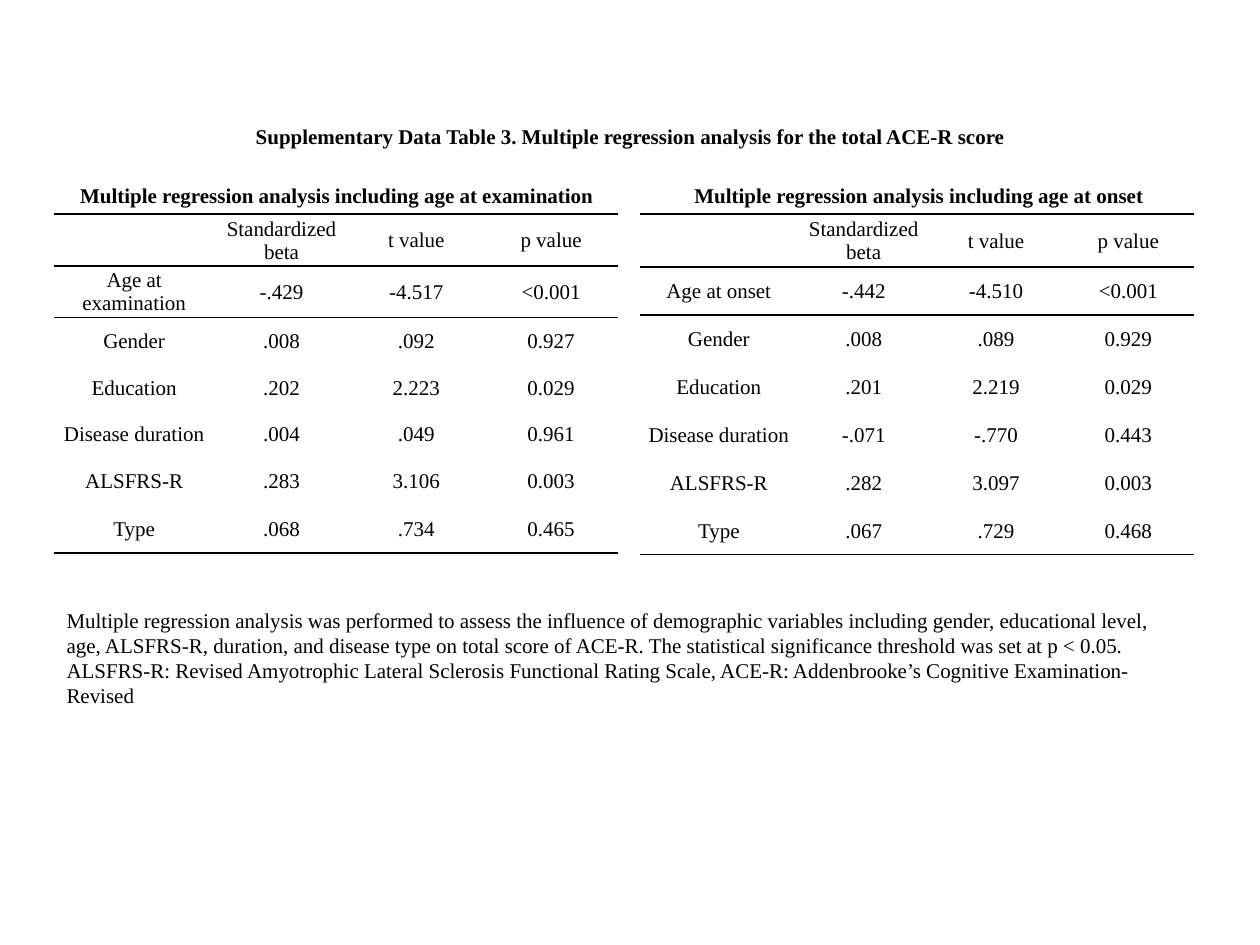
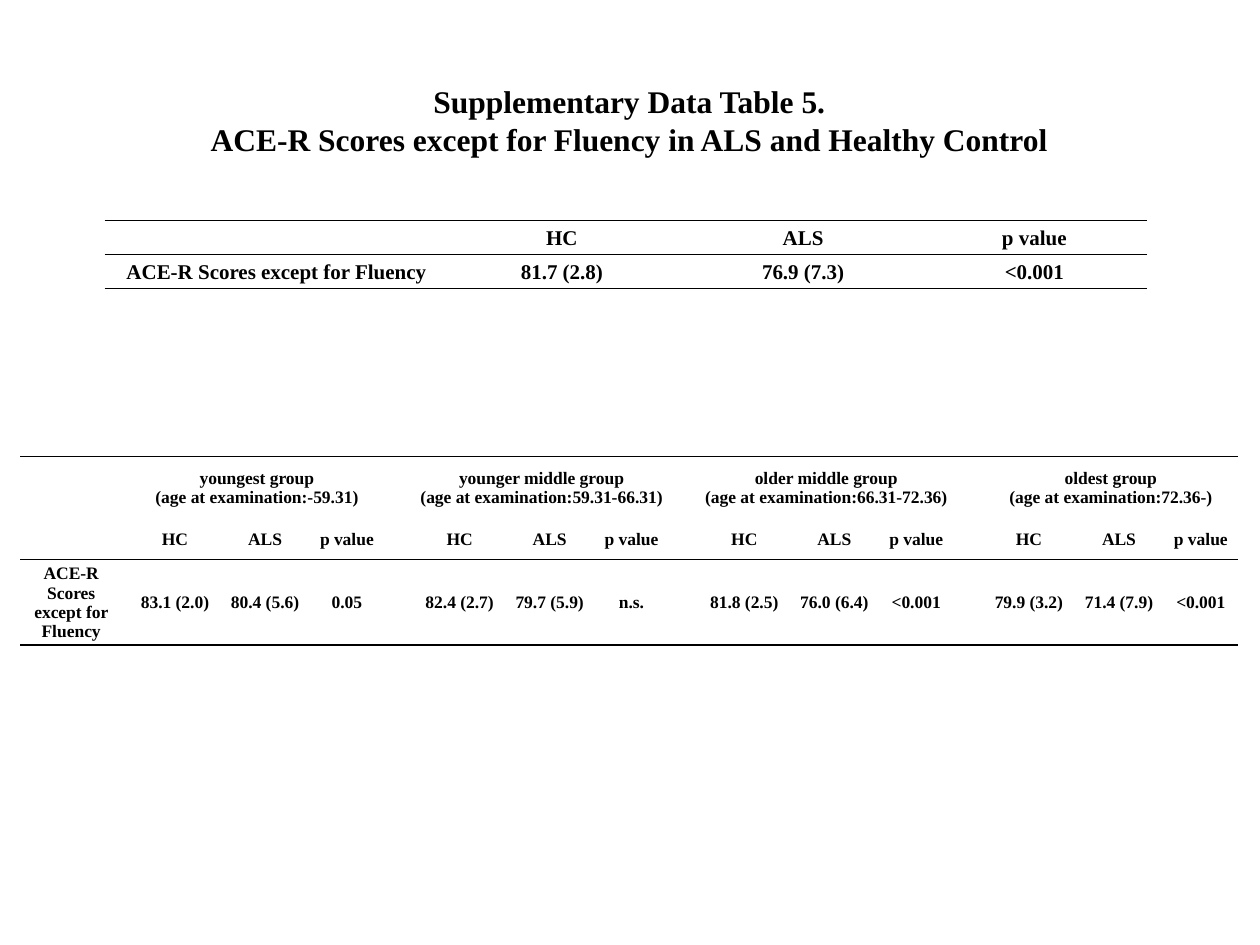
from lxml import etree
from pptx import Presentation
from pptx import util as u
from pptx.dml.color import RGBColor
from pptx.enum import text
from pptx.oxml.ns import qn

COLORS = {"ink": "000000"}
FONT = "Times New Roman"
NO_GRID = "{2D5ABB26-0587-4C30-8999-92F81FD0307C}"
CENTER, LEFT = text.PP_ALIGN.CENTER, text.PP_ALIGN.LEFT


def write(tf, content, size, bold=False, align=CENTER):
    """Fill a text frame, one paragraph for each line of content."""
    for i, line in enumerate(content.split("\n")):
        p = tf.paragraphs[0] if i == 0 else tf.add_paragraph()
        p.alignment = align
        if not line:
            # an empty cell must not hold its row open at the default size
            p._p.get_or_add_endParaRPr().set("sz", str(size * 100))
            continue
        r = p.add_run()
        r.text = line
        r.font.name, r.font.size, r.font.bold = FONT, u.Pt(size), bold
        r.font.color.rgb = RGBColor.from_string(COLORS["ink"])


def add_ruled_table(s, left, top, cols, heights, rows, rules, size, bold=False):
    """Add a table with horizontal rules only; rules maps a row boundary to a width in points."""
    frame = s.shapes.add_table(len(rows), len(cols), u.Inches(left), u.Inches(top),
                               u.Inches(sum(cols)), u.Inches(sum(heights)))
    tbl = frame.table
    tbl.first_row = tbl.horz_banding = False
    tbl._tbl.tblPr.find(qn("a:tableStyleId")).text = NO_GRID
    for col, width in zip(tbl.columns, cols):
        col.width = u.Inches(width)
    for y, (height, row) in enumerate(zip(heights, rows)):
        tbl.rows[y].height = u.Inches(height)
        for x, content in enumerate(row):
            cell = tbl.cell(y, x)
            cell.margin_left = cell.margin_right = cell.margin_top = u.Inches(0.01)
            cell.margin_bottom = 0
            cell.vertical_anchor = text.MSO_ANCHOR.MIDDLE
            write(cell.text_frame, content, size, bold)
            for side, boundary in (("a:lnT", y), ("a:lnB", y + 1)):
                if boundary in rules:
                    ln = etree.SubElement(cell._tc.get_or_add_tcPr(), qn(side),
                                          w=str(u.Pt(rules[boundary])))
                    fill = etree.SubElement(ln, qn("a:solidFill"))
                    etree.SubElement(fill, qn("a:srgbClr"), val=COLORS["ink"])
            cell.fill.background()
    return tbl


prs = Presentation()
prs.slide_width, prs.slide_height = u.Inches(10), u.Inches(7.5)
blank = prs.slide_layouts[6]
regression, fluency = prs.slides.add_slide(blank), prs.slides.add_slide(blank)

# Slide 1: two regression tables side by side
header = ["", "Standardized\nbeta", "t value", "p value"]
factors = ["Gender", "Education", "Disease duration", "ALSFRS-R", "Type"]
models = [
    (0.43, [1.27] + [1.07] * 3, [0.41] * 2 + [0.37] * 4 + [0.39], "Age at examination",
     [["-.429", "-4.517", "<0.001"], [".008", ".092", "0.927"], [".202", "2.223", "0.029"],
      [".004", ".049", "0.961"], [".283", "3.106", "0.003"], [".068", ".734", "0.465"]]),
    (5.08, [1.25] + [1.05] * 3, [0.42] + [0.38] * 6, "Age at onset",
     [["-.442", "-4.510", "<0.001"], [".008", ".089", "0.929"], [".201", "2.219", "0.029"],
      ["-.071", "-.770", "0.443"], [".282", "3.097", "0.003"], [".067", ".729", "0.468"]]),
]
for left, cols, heights, age, values in models:
    rows = [header] + [[name] + v for name, v in zip([age] + factors, values)]
    add_ruled_table(regression, left, 1.7, cols, heights, rows, {0: 1, 1: 1, 7: 1}, 12)

# Slide 2: all subjects, then the four age groups
overall = add_ruled_table(
    fluency, 0.83, 1.75, [2.66, 1.94, 1.89, 1.78], [0.27] * 2,
    [["", "HC", "ALS", "p value"],
     ["ACE-R Scores except for Fluency", "81.7 (2.8)", "76.9 (7.3)", "<0.001"]],
    {0: 1, 1: 0.5, 2: 1}, 12, True)
overall.cell(1, 0).margin_left = u.Inches(0.08)

groups = [
    ("youngest group\n(age at examination:-59.31)", ["83.1 (2.0)", "80.4 (5.6)", "0.05"]),
    ("younger middle group\n(age at examination:59.31-66.31)", ["82.4 (2.7)", "79.7 (5.9)", "n.s."]),
    ("older middle group\n(age at examination:66.31-72.36)", ["81.8 (2.5)", "76.0 (6.4)", "<0.001"]),
    ("oldest group\n(age at examination:72.36-)", ["79.9 (3.2)", "71.4 (7.9)", "<0.001"]),
]
# each group takes three columns, with a narrow gap column before it
cols, names, measures = [0.81], [""], [""]
scores = ["ACE-R Scores except for Fluency"]
for i, (name, values) in enumerate(groups):
    cols += [0.24 if i else 0.05, 0.72, 0.71, 0.59]
    names += ["", name, "", ""]
    measures += ["", "HC", "ALS", "p value"]
    scores += [""] + values
by_age = add_ruled_table(fluency, 0.16, 3.62, cols, [0.5, 0.32, 0.68],
                         [names, measures, scores], {0: 0.5, 2: 1, 3: 1}, 10, True)
for x in range(2, len(cols), 4):
    # drop the empty paragraphs' cells into the group heading
    by_age.cell(0, x).merge(by_age.cell(0, x + 2))

# Titles and notes
notes = ("Multiple regression analysis was performed to assess the influence of demographic "
         "variables including gender, educational level, age, ALSFRS-R, duration, and disease "
         "type on total score of ACE-R. The statistical significance threshold was set at "
         "p < 0.05.\n"
         "ALSFRS-R: Revised Amyotrophic Lateral Sclerosis Functional Rating Scale, "
         "ACE-R: Addenbrooke’s Cognitive Examination-Revised")
boxes = [
    (regression, (0.28, 0.93, 9.45, 0.3), 12, True, CENTER,
     "Supplementary Data Table 3. Multiple regression analysis for the total ACE-R score"),
    (regression, (0.43, 4.77, 9.06, 0.91), 12, False, LEFT, notes),
    (regression, (0.43, 1.4, 4.49, 0.3), 12, True, CENTER,
     "Multiple regression analysis including age at examination"),
    (regression, (5.11, 1.4, 4.37, 0.3), 12, True, CENTER,
     "Multiple regression analysis including age at onset"),
    (fluency, (1.54, 0.6, 6.91, 0.71), 18, True, CENTER,
     "Supplementary Data Table 5.\nACE-R Scores except for Fluency in ALS and Healthy Control"),
]
for s, place, size, bold, align, content in boxes:
    tf = s.shapes.add_textbox(*map(u.Inches, place)).text_frame
    tf.word_wrap = True
    tf.auto_size = text.MSO_AUTO_SIZE.SHAPE_TO_FIT_TEXT
    write(tf, content, size, bold, align)

prs.save("out.pptx")
